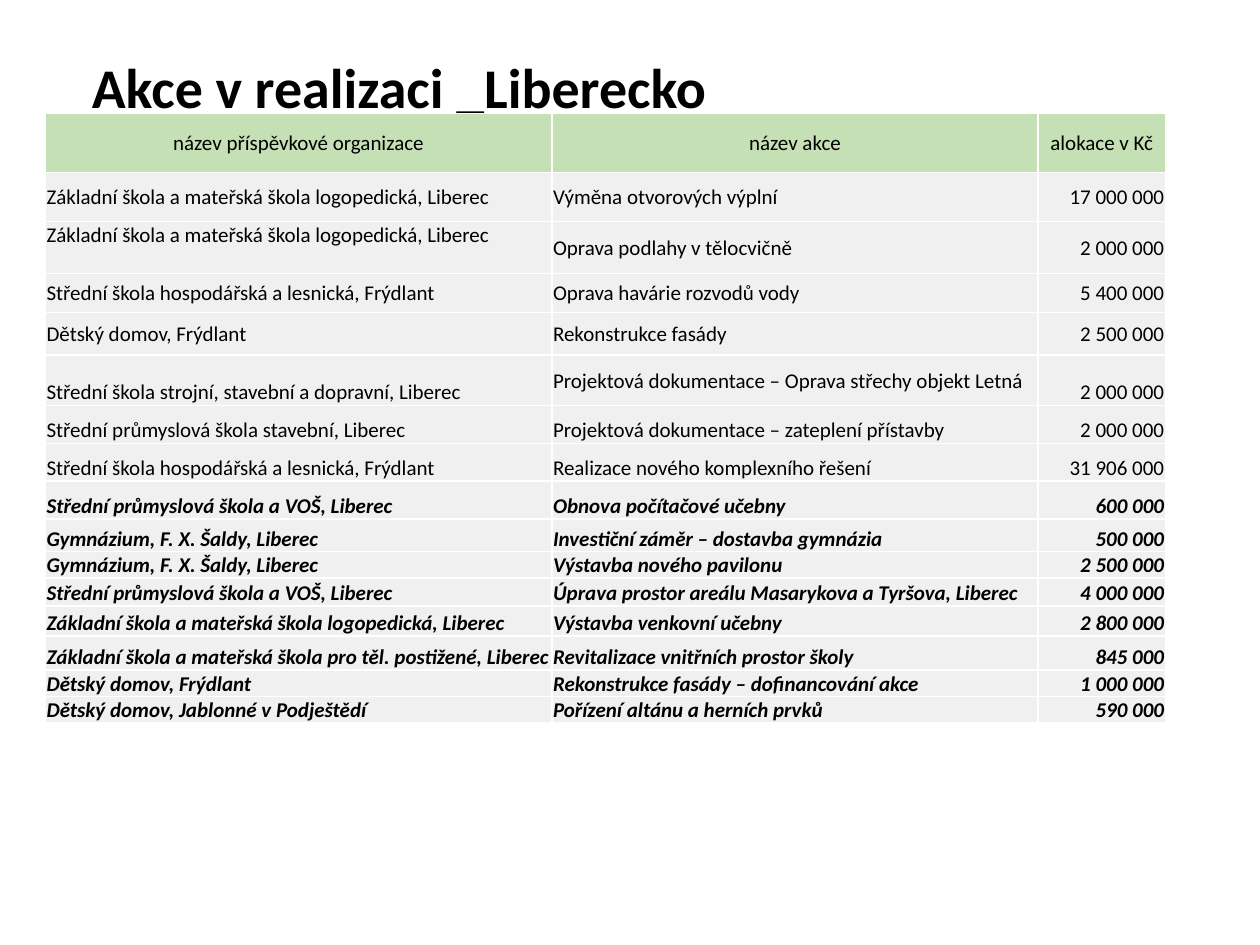
import pptx
import pptx.dml.color
import pptx.enum.text
import pptx.oxml
import pptx.oxml.ns
import pptx.util
from dataclasses import dataclass

Inches = pptx.util.Inches
Pt = pptx.util.Pt
ALIGN = pptx.enum.text.PP_ALIGN
ANCHOR = pptx.enum.text.MSO_ANCHOR


@dataclass(frozen=True)
class Theme:
    font: str = "Calibri"
    ink: str = "000000"
    header_fill: str = "C5E0B4"
    body_fill: str = "F0F0F0"
    border: str = "FFFFFF"
    border_width: float = 1
    title_size: int = 32
    table_size: int = 12


THEME = Theme()

HEADINGS = ("název příspěvkové organizace", "název akce", "alokace v Kč")
COLUMN_WIDTHS = (4.02, 3.86, 1.01)
HEADER_HEIGHT = 0.47
COLUMN_ALIGNS = (ALIGN.LEFT, ALIGN.LEFT, ALIGN.RIGHT)

# Schools that appear more than once
LOGOPEDIC = "Základní škola a mateřská škola logopedická, Liberec"
FORESTRY = "Střední škola hospodářská a lesnická, Frýdlant"
CHILDREN_HOME = "Dětský domov, Frýdlant"
TECHNICAL = "Střední průmyslová škola a VOŠ, Liberec"
GRAMMAR = "Gymnázium, F. X. Šaldy, Liberec"

# Row height, anchors by column (t, m, b), organisation, project, allocation
PROJECTS = (
    (0.39, "mmm", LOGOPEDIC, "Výměna otvorových výplní", "17 000 000"),
    (0.41, "tmm", LOGOPEDIC, "Oprava podlahy v tělocvičně", "2 000 000"),
    (0.31, "mmm", FORESTRY, "Oprava havárie rozvodů vody", "5 400 000"),
    (0.34, "mmm", CHILDREN_HOME, "Rekonstrukce fasády", "2 500 000"),
    (0.40, "bmb", "Střední škola strojní, stavební a dopravní, Liberec",
     "Projektová dokumentace – Oprava střechy objekt Letná", "2 000 000"),
    (0.30, "bbb", "Střední průmyslová škola stavební, Liberec",
     "Projektová dokumentace – zateplení přístavby", "2 000 000"),
    (0.30, "bbb", FORESTRY, "Realizace nového komplexního řešení", "31 906 000"),
    (0.30, "bbb", TECHNICAL, "Obnova počítačové učebny", "600 000"),
    (0.26, "bbb", GRAMMAR, "Investiční záměr – dostavba gymnázia", "500 000"),
    (0.21, "bbb", GRAMMAR, "Výstavba nového pavilonu", "2 500 000"),
    (0.22, "bbb", TECHNICAL,
     "Úprava prostor areálu Masarykova a Tyršova, Liberec", "4 000 000"),
    (0.24, "bbb", LOGOPEDIC, "Výstavba venkovní učebny", "2 800 000"),
    (0.27, "bbb", "Základní škola a mateřská škola pro těl. postižené, Liberec",
     "Revitalizace vnitřních prostor školy", "845 000"),
    (0.21, "bbb", CHILDREN_HOME, "Rekonstrukce fasády – dofinancování akce",
     "1 000 000"),
    (0.21, "bbb", "Dětský domov, Jablonné v Podještědí",
     "Pořízení altánu a herních prvků", "590 000"),
)
FIRST_EMPHASISED = 7
ANCHORS = {"t": ANCHOR.TOP, "m": ANCHOR.MIDDLE, "b": ANCHOR.BOTTOM}


def rgb(value):
    return pptx.dml.color.RGBColor.from_string(value)


def write_text(frame, text, *, size, bold=False, italic=False, align=ALIGN.LEFT):
    paragraph = frame.paragraphs[0]
    paragraph.alignment = align
    run = paragraph.add_run()
    run.text = text
    run.font.name = THEME.font
    run.font.size = Pt(size)
    run.font.bold = bold
    run.font.italic = italic
    run.font.color.rgb = rgb(THEME.ink)


def set_borders(cell):
    properties = cell._tc.get_or_add_tcPr()
    for position, side in enumerate(("lnL", "lnR", "lnT", "lnB")):
        border = pptx.oxml.parse_xml(
            f'<a:{side} {pptx.oxml.ns.nsdecls("a")} w="{Pt(THEME.border_width)}">'
            f'<a:solidFill><a:srgbClr val="{THEME.border}"/></a:solidFill></a:{side}>')
        properties.insert(position, border)


def fill_cell(cell, text, *, fill, anchor, **text_format):
    cell.margin_left = cell.margin_right = cell.margin_top = Inches(0.01)
    cell.margin_bottom = 0
    cell.vertical_anchor = anchor
    cell.fill.solid()
    cell.fill.fore_color.rgb = rgb(fill)
    set_borders(cell)
    write_text(cell.text_frame, text, size=THEME.table_size, **text_format)


def add_title(slide, text):
    title = slide.shapes.add_textbox(
        Inches(0.63), Inches(0.37), Inches(8.35), Inches(0.64))
    title.text_frame.word_wrap = True
    write_text(title.text_frame, text, size=THEME.title_size, bold=True)


def add_projects_table(slide):
    heights = [HEADER_HEIGHT] + [project[0] for project in PROJECTS]
    projects_table = slide.shapes.add_table(
        len(heights), len(COLUMN_WIDTHS), Inches(0.36), Inches(0.9),
        Inches(sum(COLUMN_WIDTHS)), Inches(sum(heights))).table
    for column, width in zip(projects_table.columns, COLUMN_WIDTHS):
        column.width = Inches(width)
    for row, height in zip(projects_table.rows, heights):
        row.height = Inches(height)

    # Header row
    for column, heading in enumerate(HEADINGS):
        fill_cell(projects_table.cell(0, column), heading, fill=THEME.header_fill,
                  anchor=ANCHOR.MIDDLE, align=ALIGN.CENTER)

    # Project rows, the later ones emphasised
    for index, (_, anchors, *values) in enumerate(PROJECTS):
        emphasised = index >= FIRST_EMPHASISED
        for column, value in enumerate(values):
            fill_cell(projects_table.cell(index + 1, column), value,
                      fill=THEME.body_fill, anchor=ANCHORS[anchors[column]],
                      align=COLUMN_ALIGNS[column],
                      bold=emphasised, italic=emphasised)


def main():
    presentation = pptx.Presentation()
    presentation.slide_width = Inches(10)
    presentation.slide_height = Inches(7.5)
    slide = presentation.slides.add_slide(presentation.slide_layouts[6])
    add_title(slide, "Akce v realizaci _Liberecko")
    add_projects_table(slide)
    presentation.save("out.pptx")


if __name__ == "__main__":
    main()
